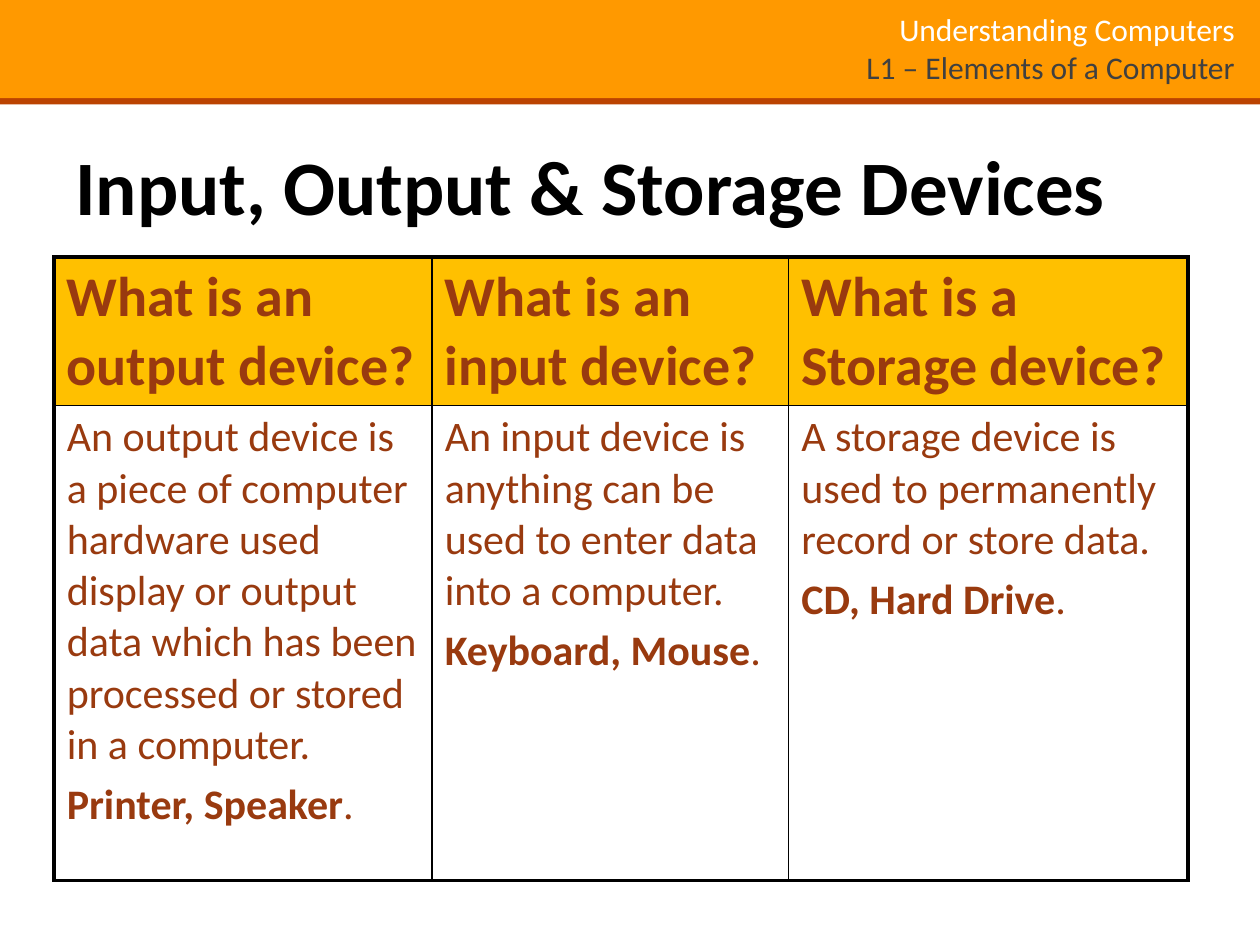
"""Builds a slide that compares output, input and storage devices in a table."""
import lxml.etree
import pptx
import pptx.dml.color
import pptx.enum.text
import pptx.oxml.ns
import pptx.util

Pt = pptx.util.Pt
RGB = pptx.dml.color.RGBColor.from_string
ALIGN = pptx.enum.text.PP_ALIGN
qn = pptx.oxml.ns.qn

theme = {
    "font": "Calibri",
    "band": "FF9900", "rule": "BB4301", "head": "FFC000",
    "text": "993A0F", "line": "000000", "title": "000000",
    "unit": "FFFFFF", "topic": "404040",
    "small": 18, "body": 24, "large": 32, "huge": 44,
    "thin": 1, "thick": 2.25,
}

deck = pptx.Presentation()
deck.slide_width = pptx.util.Inches(10)
deck.slide_height = pptx.util.Inches(7.5)
slide = deck.slides.add_slide(deck.slide_layouts[6])
step = deck.slide_width / 100


def grid(*spans):
    """Turn grid columns and rows into lengths."""
    return [round(span * step) for span in spans]


def style(run, size, color, bold=False):
    """Apply the theme's type to a run."""
    form = {"name": theme["font"], "size": Pt(theme[size]), "bold": bold}
    for key, value in form.items():
        setattr(run.font, key, value)
    run.font.color.rgb = RGB(theme[color])


for top, high, tint in [(7.7, 0.6, "rule"), (0, 7.8, "band")]:
    bar = slide.shapes.add_shape(1, *grid(0, top, 100, high))
    bar.shadow.inherit = False
    bar.fill.solid()
    bar.fill.fore_color.rgb = RGB(theme[tint])
    bar.line.fill.background()

labels = [
    ((49.9, 0.3, 49.1, 6.9), ALIGN.RIGHT, "small",
     [("Understanding Computers", "unit"),
      ("L1 – Elements of a Computer", "topic")]),
    ((5, 10.5, 90, 12.5), ALIGN.LEFT, "huge",
     [("Input, Output & Storage Devices", "title")]),
]
for area, side, size, lines in labels:
    frame = slide.shapes.add_textbox(*grid(*area)).text_frame
    frame.word_wrap = True
    para = frame.paragraphs[0]
    para.alignment = side
    for spot, (words, tint) in enumerate(lines):
        if spot:
            para.add_line_break()
        run = para.add_run()
        run.text = words
        style(run, size, tint)
        run.font.bold = size == "huge"

topics = [
    (30, "What is an output device?",
     "An output device is a piece of computer hardware used display or "
     "output data which has been processed or stored in a computer.",
     "Printer, Speaker"),
    (28.3, "What is an input device?",
     "An input device is anything can be used to enter data into a computer.",
     "Keyboard, Mouse"),
    (31.7, "What is a Storage device?",
     "A storage device is used to permanently record or store data.",
     "CD, Hard Drive"),
]
rows = [11.8, 37.7]
wide = sum(topic[0] for topic in topics)
table = slide.shapes.add_table(
    len(rows), len(topics), *grid(4.3, 20.4, wide, sum(rows))).table
table.first_row = table.horz_banding = False
for row, high in zip(table.rows, rows):
    row.height = grid(high)[0]

for col, (span, ask, answer, items) in enumerate(topics):
    table.columns[col].width = grid(span)[0]
    texts = [
        [[(ask, True)]],
        [[(answer, False)], [(items, True), (".", False)]],
    ]
    for row, paras in enumerate(texts):
        cell = table.cell(row, col)
        props = cell._tc.get_or_add_tcPr()
        edges = {"L": col == 0, "R": col == len(topics) - 1,
                 "T": row == 0, "B": row == len(rows) - 1}
        for side, outer in edges.items():
            weight = Pt(theme["thick" if outer else "thin"])
            line = lxml.etree.SubElement(props, qn("a:ln" + side), w=str(weight))
            fill = lxml.etree.SubElement(line, qn("a:solidFill"))
            lxml.etree.SubElement(fill, qn("a:srgbClr"), val=theme["line"])
        if row == 0:
            cell.fill.solid()
            cell.fill.fore_color.rgb = RGB(theme["head"])
        else:
            cell.fill.background()
        frame = cell.text_frame
        size = "body" if row else "large"
        for spot, parts in enumerate(paras):
            para = frame.add_paragraph() if spot else frame.paragraphs[0]
            if spot:
                para.space_before = Pt(theme[size] * 0.2)
            for words, bold in parts:
                run = para.add_run()
                run.text = words
                style(run, size, "text", bold)

deck.save("out.pptx")
